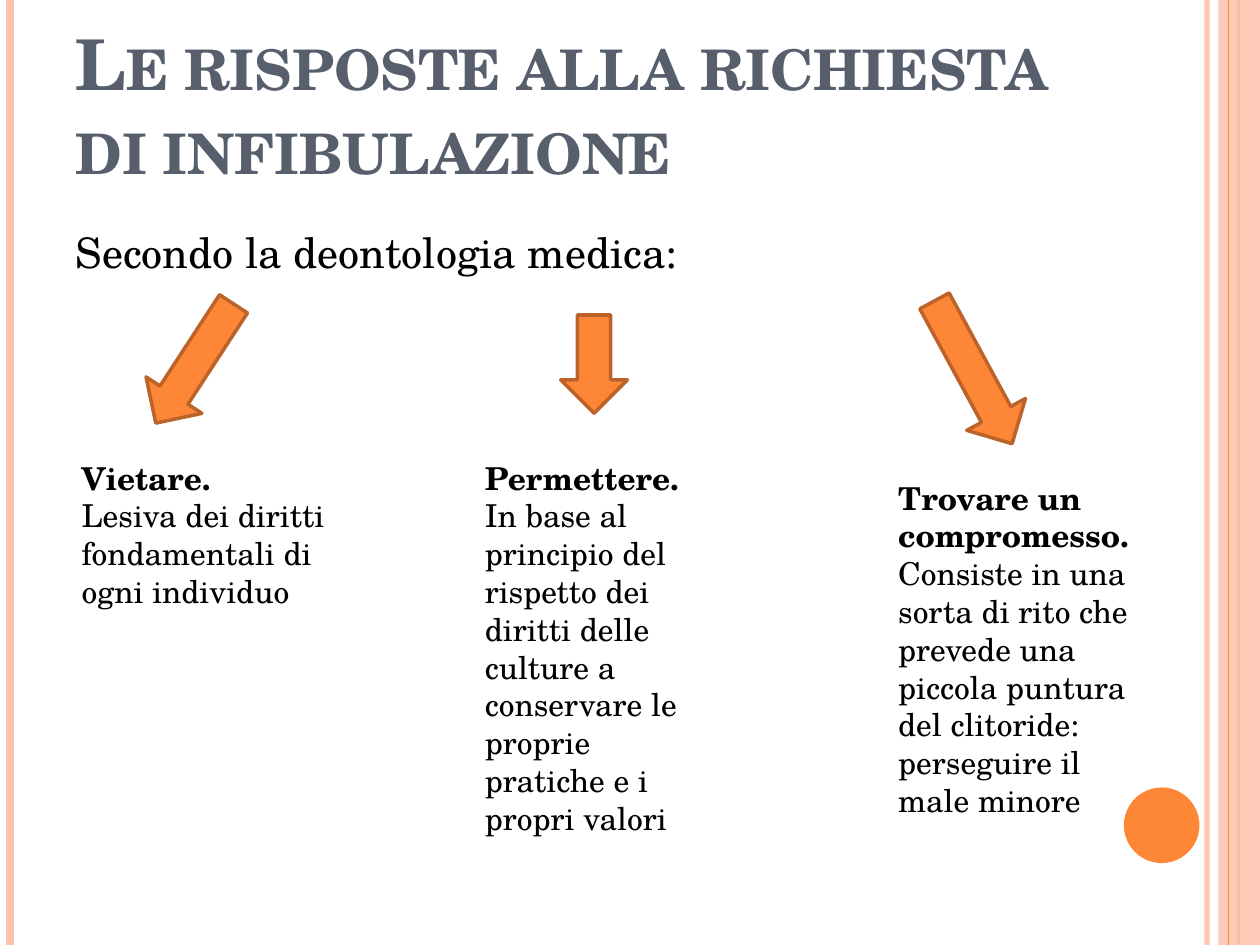
from dataclasses import dataclass

from lxml import etree
from pptx import Presentation
from pptx.dml.color import RGBColor
from pptx.enum.shapes import MSO_CONNECTOR, MSO_SHAPE
from pptx.enum.text import MSO_ANCHOR, MSO_AUTO_SIZE, PP_ALIGN
from pptx.oxml.ns import qn
from pptx.util import Inches, Pt

STRAIGHT = MSO_CONNECTOR.STRAIGHT
RECTANGLE, OVAL, DOWN_ARROW = MSO_SHAPE.RECTANGLE, MSO_SHAPE.OVAL, MSO_SHAPE.DOWN_ARROW
TOP, BOTTOM = MSO_ANCHOR.TOP, MSO_ANCHOR.BOTTOM
LEFT = PP_ALIGN.LEFT
NO_FIT, FIT_SHAPE = MSO_AUTO_SIZE.NONE, MSO_AUTO_SIZE.SHAPE_TO_FIT_TEXT

FONT = "TeX Gyre Schola"
ORANGE, DARK_ORANGE, PINK = "FE8637", "BC6329", "FEC3AE"
SLATE, BLACK = "575F6D", "000000"
PAGE_WIDTH, PAGE_HEIGHT = 10, 7.5
ARROW_WIDTH = 0.53


@dataclass
class Rule:
    x: float
    color: str
    width: float
    opacity: int = 100


@dataclass
class Arrow:
    left: float
    top: float
    height: float
    rotation: float = 0


@dataclass
class Answer:
    left: float
    top: float
    width: float
    height: float
    heading: str
    detail: str
    arrow: Arrow


RULES = [
    Rule(9.58, PINK, 3, 93),
    Rule(0.08, PINK, 4.5),
    Rule(9.83, ORANGE, 1.5),
]
FRONT_RULE = Rule(9.75, ORANGE, 0.75)

ANSWERS = [
    Answer(0.55, 3.59, 2.19, 1.31, "Vietare.",
           "Lesiva dei diritti fondamentali di ogni individuo",
           Arrow(1.28, 2.32, 1.13, 33.1)),
    Answer(3.75, 3.59, 1.8, 3.13, "Permettere.",
           "In base al principio del rispetto dei diritti delle culture a "
           "conservare le proprie pratiche e i propri valori",
           Arrow(4.45, 2.5, 0.78)),
    Answer(7.03, 3.75, 2.11, 2.83, "Trovare un compromesso.",
           "Consiste in una sorta di rito che prevede una piccola puntura "
           "del clitoride: perseguire il male minore",
           Arrow(7.46, 2.31, 1.29, 331.5)),
]


def paint(fill, color: str, opacity: int = 100) -> None:
    fill.solid()
    fill.fore_color.rgb = RGBColor.from_string(color)
    if opacity < 100:
        for node in fill._xPr.iter(qn("a:srgbClr")):
            etree.SubElement(node, qn("a:alpha")).set("val", str(opacity * 1000))


def add_rule(page, rule: Rule) -> None:
    x = Inches(rule.x)
    line = page.shapes.add_connector(STRAIGHT, x, 0, x, Inches(PAGE_HEIGHT))
    line.line.width = Pt(rule.width)
    paint(line.line.fill, rule.color, rule.opacity)
    etree.SubElement(line._element.spPr, qn("a:effectLst"))


def add_solid(page, kind, left: float, top: float, width: float, height: float,
              color: str, opacity: int = 100):
    """Add a filled shape without outline or shadow."""
    shape = page.shapes.add_shape(kind, Inches(left), Inches(top),
                                  Inches(width), Inches(height))
    shape.shadow.inherit = False
    paint(shape.fill, color, opacity)
    shape.line.fill.background()
    return shape


def add_arrow(page, arrow: Arrow) -> None:
    shape = add_solid(page, DOWN_ARROW, arrow.left, arrow.top,
                      ARROW_WIDTH, arrow.height, ORANGE)
    shape.rotation = arrow.rotation
    paint(shape.line.fill, DARK_ORANGE)
    shape.line.width = Pt(2)


def style(paragraph, size: float, color: str = BLACK, bold: bool = False) -> None:
    paragraph.alignment = LEFT
    font = paragraph.font
    font.name, font.size, font.bold = FONT, Pt(size), bold
    font.color.rgb = RGBColor.from_string(color)


def fill_placeholder(holder, top: float, height: float, text: str, anchor):
    """Place a template placeholder, write its text and return the paragraph."""
    holder.left, holder.top = Inches(0.5), Inches(top)
    holder.width, holder.height = Inches(8.17), Inches(height)
    frame = holder.text_frame
    frame.text = text
    frame.vertical_anchor = anchor
    frame.auto_size = NO_FIT
    return frame.paragraphs[0]


def add_answer(page, answer: Answer) -> None:
    box = page.shapes.add_textbox(Inches(answer.left), Inches(answer.top),
                                  Inches(answer.width), Inches(answer.height))
    frame = box.text_frame
    frame.word_wrap = True
    frame.auto_size = FIT_SHAPE
    heading, detail = frame.paragraphs[0], frame.add_paragraph()
    heading.text, detail.text = answer.heading, answer.detail
    style(heading, 18, bold=True)
    style(detail, 18)


def main() -> None:
    deck = Presentation()
    deck.slide_width, deck.slide_height = Inches(PAGE_WIDTH), Inches(PAGE_HEIGHT)
    page = deck.slides.add_slide(deck.slide_layouts[1])

    title = fill_placeholder(page.shapes.title, 0.3, 1.25,
                             "Le risposte alla richiesta di infibulazione", BOTTOM)
    style(title, 40, SLATE, bold=True)
    title.runs[0]._r.get_or_add_rPr().set("cap", "small")

    intro = fill_placeholder(page.placeholders[1], 1.75, 5.33,
                             "Secondo la deontologia medica:", TOP)
    style(intro, 24)
    intro.space_before = Pt(6)
    properties = intro._p.get_or_add_pPr()
    properties.set("marL", str(Inches(0.3)))
    properties.set("indent", str(Inches(-0.3)))
    properties.insert_element_before(
        etree.SubElement(properties, qn("a:buNone")), "a:tabLst", "a:defRPr")

    for rule in RULES:
        add_rule(page, rule)
    add_solid(page, RECTANGLE, 9.67, 0, 0.33, PAGE_HEIGHT, PINK, 87)
    add_rule(page, FRONT_RULE)
    add_solid(page, OVAL, 8.92, 6.25, 0.6, 0.6, ORANGE)

    for answer in ANSWERS:
        add_arrow(page, answer.arrow)
        add_answer(page, answer)

    deck.save("out.pptx")


if __name__ == "__main__":
    main()
